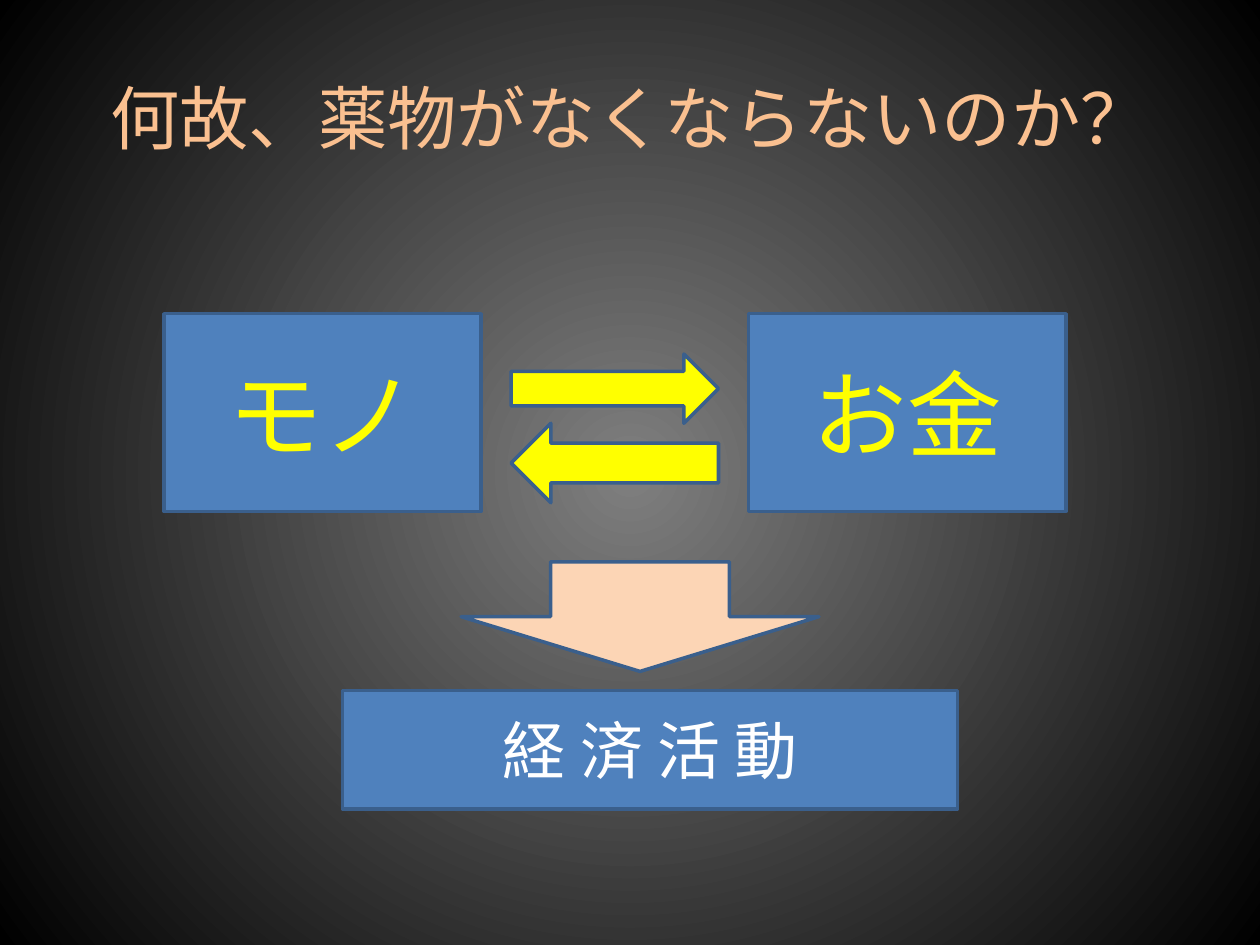
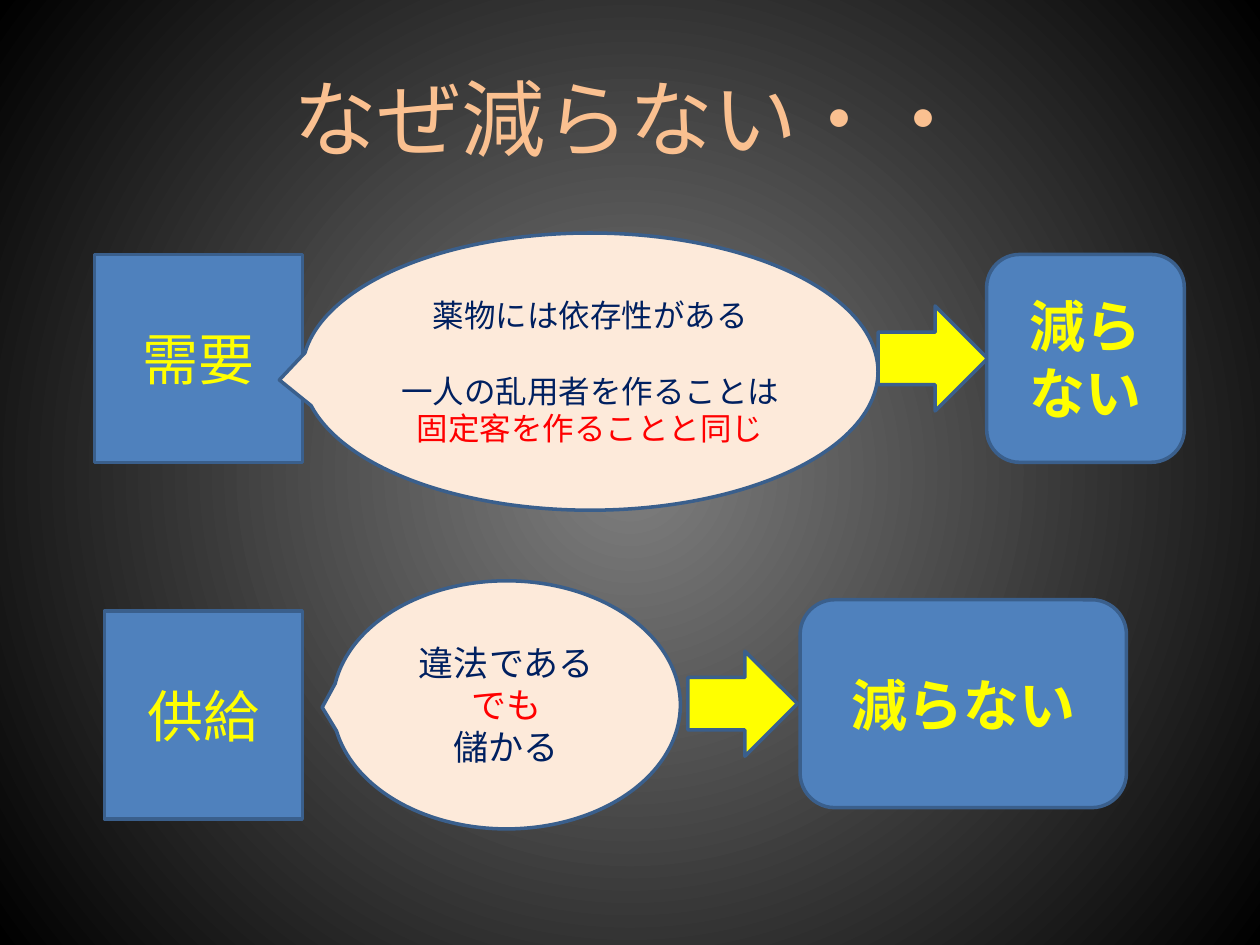
from collections import namedtuple

from lxml.etree import SubElement
from pptx import Presentation
from pptx.dml.color import RGBColor
from pptx.enum.shapes import MSO_SHAPE
from pptx.enum.text import MSO_ANCHOR, MSO_AUTO_SIZE, PP_ALIGN
from pptx.oxml.ns import qn
from pptx.util import Pt

FONT = "Noto Sans CJK JP"
GLOW = RGBColor(0x7F, 0x7F, 0x7F)
BLACK = RGBColor(0x00, 0x00, 0x00)
WHITE = RGBColor(0xFF, 0xFF, 0xFF)
ORANGE = RGBColor(0xFA, 0xC0, 0x90)
PEACH = RGBColor(0xFC, 0xD5, 0xB5)
CREAM = RGBColor(0xFD, 0xEA, 0xDA)
BLUE = RGBColor(0x4F, 0x81, 0xBD)
OUTLINE = RGBColor(0x3A, 0x5F, 0x8C)
NAVY = RGBColor(0x00, 0x20, 0x60)
YELLOW = RGBColor(0xFF, 0xFF, 0x00)
RED = RGBColor(0xFF, 0x00, 0x00)

Box = namedtuple("Box", "left top width height")
Line = namedtuple("Line", "text color space_before", defaults=(0,))
Bubble = namedtuple("Bubble", "box tip size lines")

TITLE_BOX = Box(36, 21.6, 648, 90)


def set_background(master):
    fill = master.background.fill
    fill.gradient()
    for stop, color, position in zip(fill.gradient_stops, (GLOW, BLACK), (0, 1)):
        stop.color.rgb = color
        stop.position = position
    linear = next(master.element.iter(qn("a:lin")))
    gradient = linear.getparent()
    gradient.remove(linear)
    circle = SubElement(gradient, qn("a:path"), {"path": "circle"})
    SubElement(circle, qn("a:fillToRect"), dict.fromkeys("ltrb", "50000"))


def write_lines(frame, lines, size, bold=False):
    frame.word_wrap = True
    frame.vertical_anchor = MSO_ANCHOR.MIDDLE
    for index, line in enumerate(lines):
        paragraph = frame.add_paragraph() if index else frame.paragraphs[0]
        paragraph.text = line.text
        paragraph.alignment = PP_ALIGN.CENTER
        if line.space_before:
            paragraph.space_before = Pt(line.space_before)
        font = paragraph.font
        font.name = FONT
        font.size = Pt(size)
        font.bold = bold
        font.color.rgb = line.color
        properties = paragraph._p.pPr.find(qn("a:defRPr"))
        SubElement(properties, qn("a:ea"), {"typeface": FONT})


def add_figure(slide, kind, box, color, lines=(), size=32, bold=False):
    figure = slide.shapes.add_shape(kind, *map(Pt, box))
    figure.shadow.inherit = False
    figure.fill.solid()
    figure.fill.fore_color.rgb = color
    figure.line.color.rgb = OUTLINE
    figure.line.width = Pt(2)
    write_lines(figure.text_frame, lines, size, bold)
    return figure


def add_titled_slide(deck, text, size):
    slide = deck.slides.add_slide(deck.slide_layouts[5])
    title = slide.shapes.title
    title.left, title.top, title.width, title.height = map(Pt, TITLE_BOX)
    title.text_frame.auto_size = MSO_AUTO_SIZE.NONE
    write_lines(title.text_frame, [Line(text, ORANGE)], size)
    return slide


def add_exchange(slide, box):
    side_width, gap = 181.4, 17.1
    right = box.left + box.width - side_width
    for left, label in ((box.left, "モノ"), (right, "お金")):
        add_figure(slide, MSO_SHAPE.RECTANGLE,
                   Box(left, box.top, side_width, box.height),
                   BLUE, [Line(label, YELLOW)], 54)
    arrow_left = box.left + side_width + gap
    arrow_width = box.width - 2 * (side_width + gap)
    for kind, offset, height in ((MSO_SHAPE.RIGHT_ARROW, 23, 39.6),
                                 (MSO_SHAPE.LEFT_ARROW, 62.6, 45.4)):
        add_figure(slide, kind,
                   Box(arrow_left, box.top + offset, arrow_width, height), YELLOW)


def add_result(slide, box):
    label_height = 67.7
    add_figure(slide, MSO_SHAPE.DOWN_ARROW,
               Box(box.left + 67.7, box.top, 204.5, 62.6), PEACH)
    add_figure(slide, MSO_SHAPE.RECTANGLE,
               Box(box.left, box.top + box.height - label_height,
                   box.width, label_height),
               BLUE, [Line("経 済 活 動", WHITE)], 36)


def add_reason_row(slide, box, factor, factor_width, factor_drop,
                   bubble, arrow_offset, outcome, outcome_width):
    arrow_height = 60
    add_figure(slide, MSO_SHAPE.RECTANGLE,
               Box(box.left, box.top + factor_drop, factor_width, box.height),
               BLUE, [Line(factor, YELLOW)])
    callout = add_figure(slide, MSO_SHAPE.OVAL_CALLOUT,
                         bubble.box._replace(left=box.left + bubble.box.left,
                                             top=box.top + bubble.box.top),
                         CREAM, bubble.lines, bubble.size)
    for index, offset in enumerate(bubble.tip):
        callout.adjustments[index] = offset
    add_figure(slide, MSO_SHAPE.RIGHT_ARROW,
               Box(box.left + arrow_offset,
                   box.top + (box.height - arrow_height) / 2,
                   62.6, arrow_height), YELLOW)
    add_figure(slide, MSO_SHAPE.ROUNDED_RECTANGLE,
               Box(box.left + box.width - outcome_width, box.top,
                   outcome_width, box.height),
               BLUE, [Line(text, YELLOW) for text in outcome], bold=True)


def build_economy_slide(deck):
    slide = add_titled_slide(deck, "何故、薬物がなくならないのか？", 39.6)
    add_exchange(slide, Box(93.6, 179.3, 515.5, 113))
    add_result(slide, Box(195.8, 321.1, 351.4, 141.2))


def build_reasons_slide(deck):
    slide = add_titled_slide(deck, "なぜ減らない・・", 48)
    demand = Bubble(Box(118.8, -12.2, 329, 158.4), (-0.54, 0.03), 18, [
        Line("薬物には依存性がある", NAVY),
        Line("一人の乱用者を作ることは", NAVY, 21.6),
        Line("固定客を作ることと同じ", RED)])
    supply = Bubble(Box(130.3, -10.8, 198.7, 141.8), (-0.53, 0.01), 20, [
        Line("違法である", NAVY),
        Line("でも", RED),
        Line("儲かる", NAVY)])
    add_reason_row(slide, Box(54, 145.4, 622.8, 118.8), "需要", 118.8, 0,
                   demand, 447.8, ["減ら", "ない"], 113)
    add_reason_row(slide, Box(59.8, 342.7, 583.9, 118.8), "供給", 113, 6.5,
                   supply, 333.3, ["減らない"], 186.5)


def main():
    deck = Presentation()
    deck.slide_width, deck.slide_height = Pt(720), Pt(540)
    set_background(deck.slide_master)
    build_economy_slide(deck)
    build_reasons_slide(deck)
    deck.save("out.pptx")


if __name__ == "__main__":
    main()
